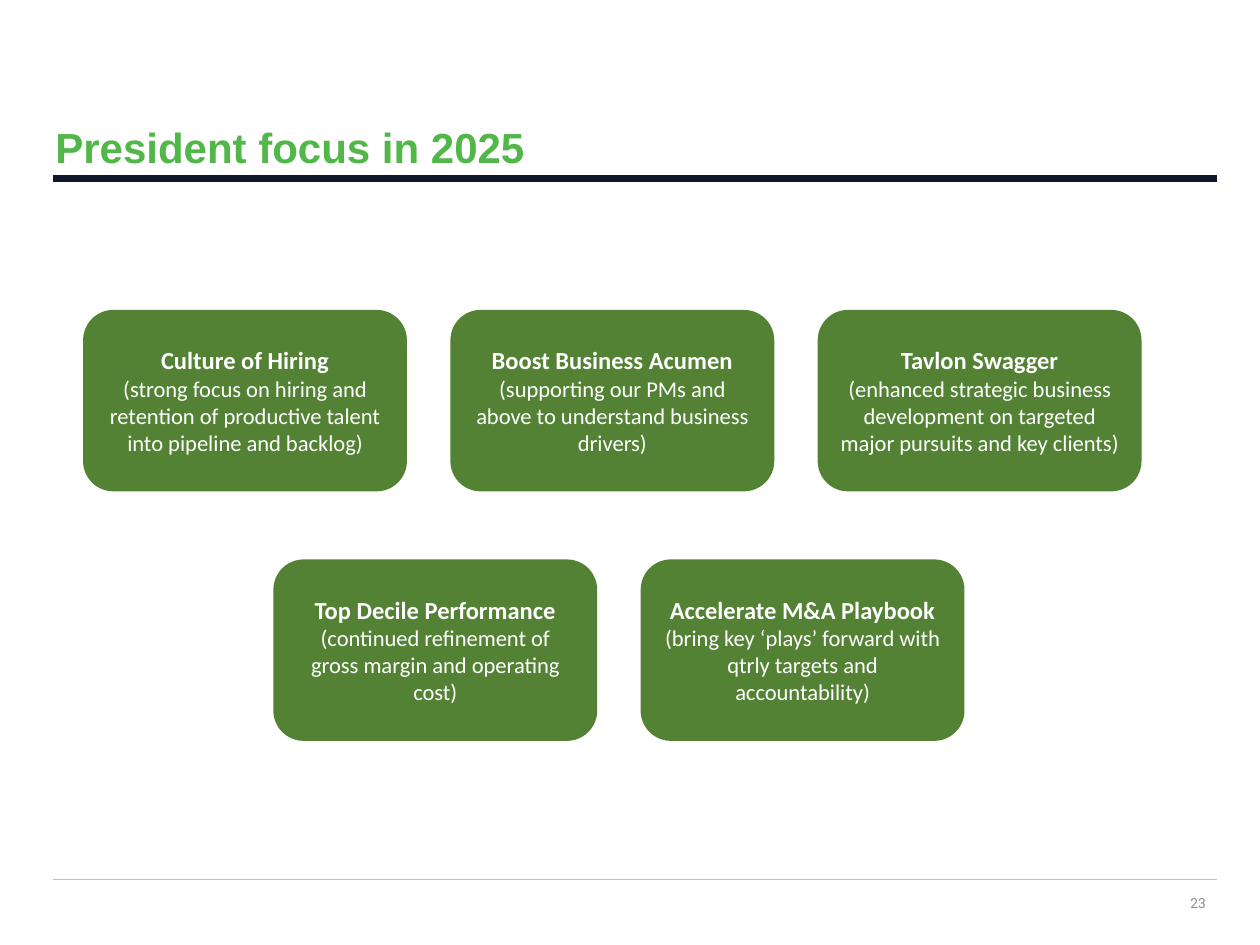
import pptx
import pptx.util
import pptx.dml.color
import pptx.enum.shapes
import pptx.enum.text
import lxml.etree

Inches = pptx.util.Inches
Pt = pptx.util.Pt
ALIGN = pptx.enum.text.PP_ALIGN
ANCHOR = pptx.enum.text.MSO_ANCHOR
KIND = pptx.enum.shapes

TITLE = "President focus in 2025"
PAGE = "23"
ROWS = [
    (0.66, 2.46, [
        ("Culture of Hiring",
         "(strong focus on hiring and retention of productive talent into pipeline and backlog)"),
        ("Boost Business Acumen",
         "(supporting our PMs and above to understand business drivers)"),
        ("Tavlon Swagger",
         "(enhanced strategic business development on targeted major pursuits and key clients)"),
    ]),
    (2.17, 4.44, [
        ("Top Decile Performance",
         "(continued refinement of gross margin and operating cost)"),
        ("Accelerate M&A Playbook",
         "(bring key ‘plays’ forward with qtrly targets and accountability)"),
    ]),
]
RULES = [(1.42, "0E182A", 4), (6.98, "BFBFBF", 0.5)]
CARD_W, CARD_H, STEP = 2.57, 1.44, 2.915

HEAD = {"name": "Calibri", "size": Pt(14), "bold": True}
BODY = {"name": "Calibri", "size": Pt(12.9), "bold": False}
TOP = {"name": "Arial", "size": Pt(24), "bold": True}
FOOT = {"name": "Roboto", "size": Pt(7.9)}
FLUSH = {"margin_left": 0, "margin_right": 0, "margin_top": 0,
         "margin_bottom": 0, "word_wrap": True}


def color(code):
    return pptx.dml.color.RGBColor.from_string(code)


def apply(item, style):
    for key, value in style.items():
        setattr(item, key, value)


def write(para, text, font, code, layout):
    apply(para, layout)
    run = para.add_run()
    run.text = text
    apply(run.font, font)
    run.font.color.rgb = color(code)


def label(slide, box, text, font, code, layout):
    frame = slide.shapes.add_textbox(*map(Inches, box)).text_frame
    apply(frame, FLUSH)
    write(frame.paragraphs[0], text, font, code, layout)


def rule(slide, y, code, width):
    line = slide.shapes.add_connector(
        KIND.MSO_CONNECTOR.STRAIGHT, Inches(0.42), Inches(y), Inches(9.66), Inches(y))
    line.line.color.rgb = color(code)
    line.line.width = Pt(width)
    props = line._element.spPr
    lxml.etree.SubElement(props, pptx.oxml.ns.qn("a:effectLst"))


def card(slide, x, y, head, body):
    shape = slide.shapes.add_shape(
        KIND.MSO_SHAPE.ROUNDED_RECTANGLE, *map(Inches, (x, y, CARD_W, CARD_H)))
    shape.shadow.inherit = False
    shape.fill.solid()
    shape.fill.fore_color.rgb = color("548235")
    shape.line.fill.background()
    frame = shape.text_frame
    apply(frame, {"word_wrap": True, "vertical_anchor": ANCHOR.MIDDLE})
    center = {"alignment": ALIGN.CENTER}
    write(frame.paragraphs[0], head, HEAD, "FFFFFF", center)
    write(frame.add_paragraph(), body, BODY, "FFFFFF", center)


def main():
    deck = pptx.Presentation()
    apply(deck, {"slide_width": Inches(10), "slide_height": Inches(7.5)})
    slide = deck.slides.add_slide(deck.slide_layouts[6])
    label(slide, (7.43, 7.1, 2.14, 0.14), PAGE, FOOT, "8C8C8C",
          {"alignment": ALIGN.RIGHT})
    for y, code, width in RULES:
        rule(slide, y, code, width)
    label(slide, (0.44, 1.01, 9.36, 0.39), TITLE, TOP, "50B748",
          {"line_spacing": 0.9})
    for left, y, cards in ROWS:
        for col, (head, body) in enumerate(cards):
            card(slide, left + col * STEP, y, head, body)
    deck.save("out.pptx")


if __name__ == "__main__":
    main()
